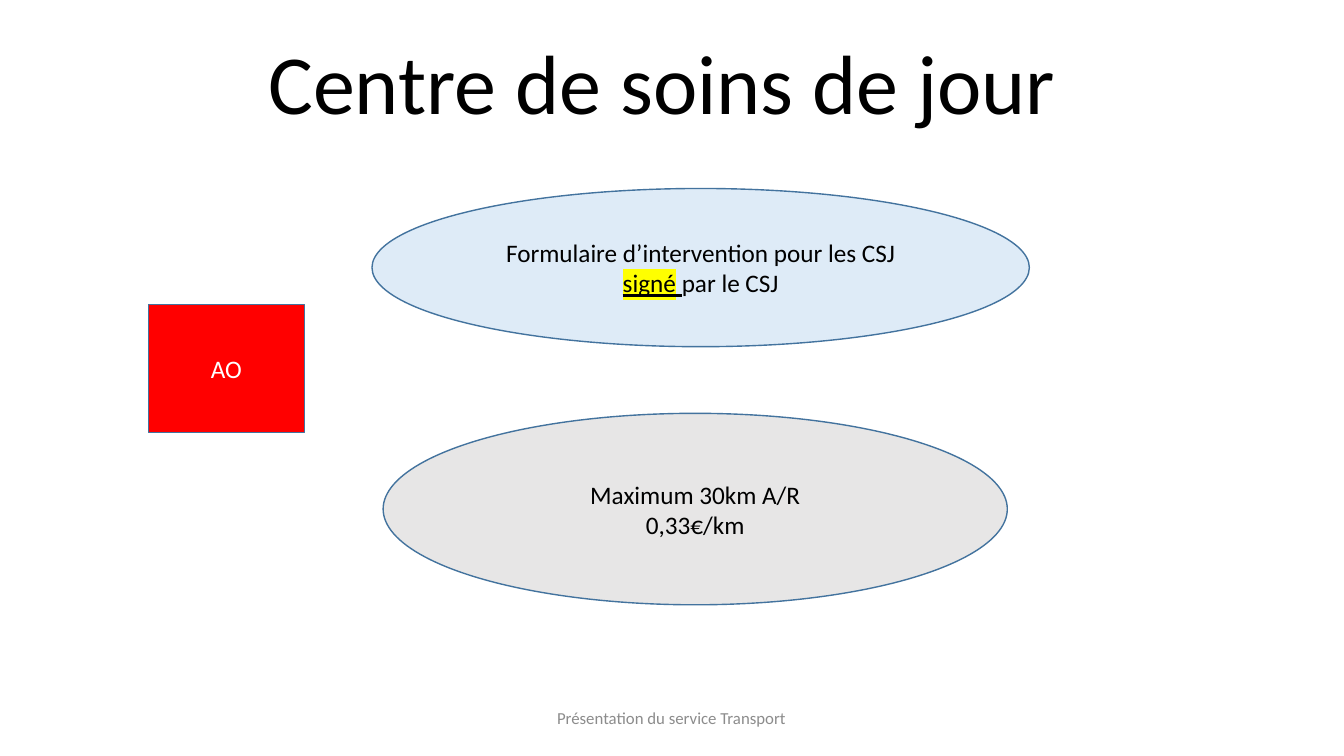
from dataclasses import dataclass

from lxml import etree
from pptx import Presentation
from pptx.dml.color import RGBColor
from pptx.enum.shapes import MSO_SHAPE
from pptx.enum.text import MSO_ANCHOR, MSO_AUTO_SIZE, PP_ALIGN
from pptx.oxml.ns import qn
from pptx.util import Inches, Pt

OVAL, RECT = MSO_SHAPE.OVAL, MSO_SHAPE.RECTANGLE
MIDDLE, BOTTOM = MSO_ANCHOR.MIDDLE, MSO_ANCHOR.BOTTOM
CENTER = PP_ALIGN.CENTER
NO_FIT = MSO_AUTO_SIZE.NONE

FONT = "Calibri"
BLACK, WHITE, GREY = "000000", "FFFFFF", "8C8C8C"
OUTLINE, YELLOW = "43739E", "FFFF00"
WIDTH, HEIGHT = Inches(13.33), Inches(7.5)


@dataclass
class Run:
    text: str
    underline: bool = False
    highlight: str = ""


@dataclass
class Box:
    """Place in percent of the slide's width and height."""
    left: float
    top: float
    width: float
    height: float


@dataclass
class Node:
    kind: MSO_SHAPE
    box: Box
    fill: str
    color: str
    paragraphs: list[list[Run]]


TITLE_BOX = Box(6.83, 4.53, 86.27, 13.73)
FOOTER_BOX = Box(34.06, 92.27, 31.81, 5.33)
NODES = [
    Node(OVAL, Box(28.51, 54.67, 46.44, 25.33), "E7E6E6", BLACK,
         [[Run("Maximum 30km A/R")], [Run("0,33€/km")]]),
    Node(OVAL, Box(27.68, 24.93, 48.91, 20.93), "DEEBF7", BLACK,
         [[Run("Formulaire d’intervention pour les CSJ "),
           Run("signé", True, YELLOW), Run(" ", True), Run("par le CSJ")]]),
    Node(RECT, Box(11.03, 40.27, 11.63, 16.93), "FF0000", WHITE,
         [[Run("AO")]]),
]


def rgb(value: str) -> RGBColor:
    return RGBColor.from_string(value)


def place(box: Box) -> dict[str, int]:
    return {
        "left": round(WIDTH * box.left / 100),
        "top": round(HEIGHT * box.top / 100),
        "width": round(WIDTH * box.width / 100),
        "height": round(HEIGHT * box.height / 100),
    }


def add_highlight(r, color: str) -> None:
    """Put the highlight right after the run's fill, as the schema asks."""
    highlight = etree.Element(qn("a:highlight"))
    etree.SubElement(highlight, qn("a:srgbClr"), val=color)
    r.font._element.find(qn("a:solidFill")).addnext(highlight)


def write(tf, paragraphs: list[list[Run]], size: float, color: str,
          anchor: MSO_ANCHOR = MIDDLE) -> None:
    frame_format = {"word_wrap": True, "auto_size": NO_FIT,
                    "vertical_anchor": anchor}
    for name, value in frame_format.items():
        setattr(tf, name, value)
    for i, runs in enumerate(paragraphs):
        p = tf.add_paragraph() if i else tf.paragraphs[0]
        p.alignment = CENTER
        for run in runs:
            r = p.add_run()
            r.text = run.text
            font_format = {"name": FONT, "size": Pt(size),
                           "underline": run.underline}
            for name, value in font_format.items():
                setattr(r.font, name, value)
            r.font.color.rgb = rgb(color)
            if run.highlight:
                add_highlight(r, run.highlight)


def add_title(s) -> None:
    sp = s.shapes.title
    for name, value in place(TITLE_BOX).items():
        setattr(sp, name, value)
    write(sp.text_frame, [[Run("Centre de soins de jour ")]], 60, BLACK, BOTTOM)
    sp.text_frame.paragraphs[0].line_spacing = 0.9


def add_node(s, node: Node) -> None:
    sp = s.shapes.add_shape(node.kind, **place(node.box))
    sp.shadow.inherit = False
    sp.fill.solid()
    sp.fill.fore_color.rgb = rgb(node.fill)
    sp.line.color.rgb = rgb(OUTLINE)
    sp.line.width = Pt(1)
    write(sp.text_frame, node.paragraphs, 18, node.color)


def add_footer(s) -> None:
    sp = s.shapes.add_textbox(**place(FOOTER_BOX))
    write(sp.text_frame, [[Run("Présentation du service Transport")]], 12, GREY)


def main() -> None:
    prs = Presentation()
    prs.slide_width, prs.slide_height = WIDTH, HEIGHT
    s = prs.slides.add_slide(prs.slide_layouts.get_by_name("Title Only"))
    add_title(s)
    for node in NODES:
        add_node(s, node)
    add_footer(s)
    prs.save("out.pptx")


if __name__ == "__main__":
    main()
